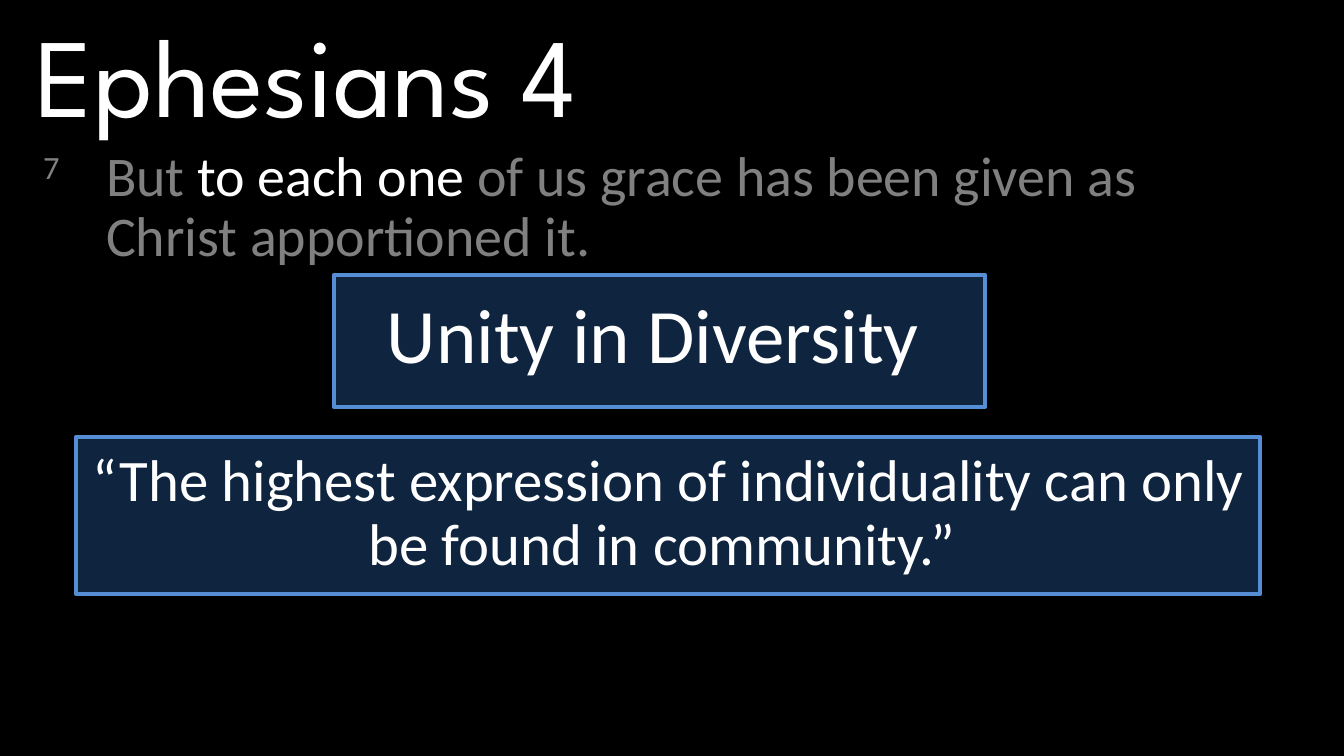
from pptx import Presentation
from pptx.dml.color import RGBColor
from pptx.enum.shapes import MSO_SHAPE as Shape
from pptx.enum.text import MSO_ANCHOR as Anchor, MSO_AUTO_SIZE as AutoSize, PP_ALIGN as Align
from pptx.util import Emu, Pt
from lxml.etree import SubElement

COLORS = {"black": "000000", "white": "FFFFFF", "gray": "808080",
          "navy": "0F243E", "blue": "558ED5"}
DRAWING_NS = "{http://schemas.openxmlformats.org/drawingml/2006/main}"
PX_PER_INCH = 100.8


def px(length):
    return Emu(round(length * 914400 / PX_PER_INCH))


def color(name):
    return RGBColor.from_string(COLORS[name])


class VerseSlide:
    heading_font = "League Spartan"
    text_font = "Calibri"

    def __init__(self, deck):
        self.slide = deck.slides.add_slide(deck.slide_layouts[1])
        background = self.slide.background.fill
        background.solid()
        background.fore_color.rgb = color("black")

    def run(self, paragraph, text, size, tint="white", font=text_font):
        run = paragraph.add_run()
        run.text = text
        run.font.size = Pt(size)
        run.font.name = font
        run.font.color.rgb = color(tint)
        return run

    def frame(self, holder, box, align=Align.LEFT):
        holder.left, holder.top, holder.width, holder.height = map(px, box)
        frame = holder.text_frame
        frame.word_wrap = True
        frame.auto_size = AutoSize.SHAPE_TO_FIT_TEXT
        frame.vertical_anchor = Anchor.TOP
        paragraph = frame.paragraphs[0]
        paragraph.alignment = align
        paragraph.space_before = Pt(0)
        return paragraph

    def title(self, text, box, size):
        heading = self.frame(self.slide.shapes.title, box)
        self.run(heading, text, size, font=self.heading_font)

    def verse(self, number, phrases, box, size, indent):
        verse = self.frame(self.slide.placeholders[1], box)
        verse.line_spacing = 0.9
        # Hanging indent without a bullet
        properties = verse._p.get_or_add_pPr()
        properties.set("marL", str(px(indent)))
        properties.set("indent", str(-px(indent)))
        SubElement(properties, DRAWING_NS + "buNone")
        marker = self.run(verse, number + " \t", size, "gray")
        marker.font._element.set("baseline", "30000")
        for text, tint in phrases:
            self.run(verse, text, size, tint)

    def panel(self, box):
        panel = self.slide.shapes.add_shape(Shape.RECTANGLE, *map(px, box))
        panel.shadow.inherit = False
        panel.fill.solid()
        panel.fill.fore_color.rgb = color("navy")
        panel.line.color.rgb = color("blue")
        panel.line.width = Pt(3)

    def statement(self, text, box, size):
        holder = self.slide.shapes.add_textbox(*map(px, box))
        statement = self.frame(holder, box, Align.CENTER)
        statement.line_spacing = 0.9
        statement.space_after = Pt(3)
        self.run(statement, text, size)


def main():
    deck = Presentation()
    deck.slide_width, deck.slide_height = px(1344), px(756)
    page = VerseSlide(deck)

    # Passage
    page.title("Ephesians 4", (25, 0, 1210, 146), 80)
    phrases = [("But ", "gray"), ("to each one ", "white"),
               ("of us grace has been given as Christ apportioned it.", "gray")]
    page.verse("7", phrases, (33, 143, 1167, 132), 40, indent=63)

    # Theme
    page.panel((334, 275, 651, 132))
    page.statement("Unity in Diversity ", (338, 292, 647, 94), 55)

    # Quotation
    page.panel((76, 437, 1184, 157))
    page.statement("“The highest expression of individuality can only be found in community.” ",
                   (80, 446, 1177, 138), 42)

    deck.save("out.pptx")


if __name__ == "__main__":
    main()
